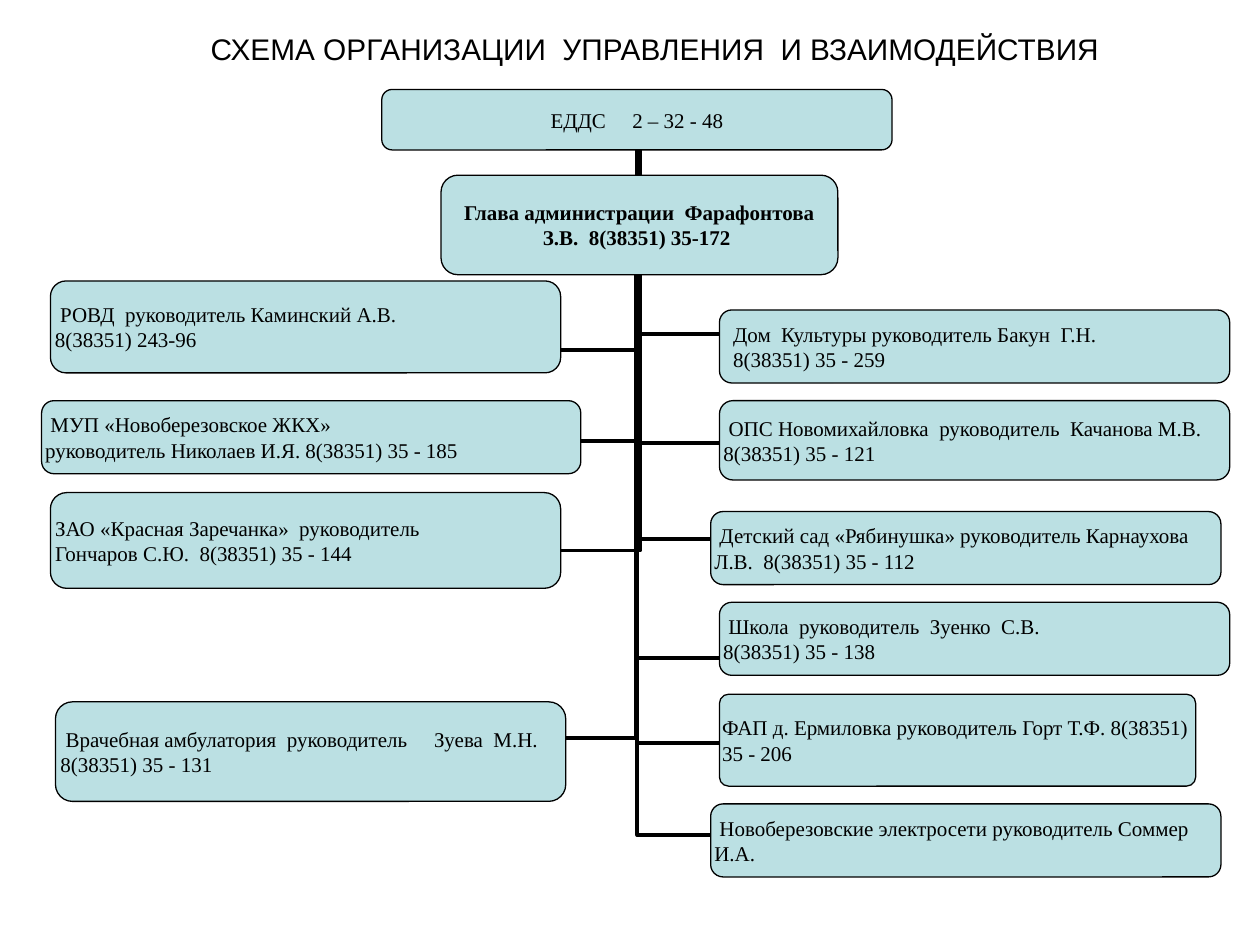
from pptx import Presentation
from pptx.dml.color import RGBColor
from pptx.enum.shapes import MSO_CONNECTOR, MSO_SHAPE
from pptx.enum.text import MSO_ANCHOR, PP_ALIGN
from pptx.oxml.ns import qn
from pptx.util import Inches, Pt
from lxml import etree

BLACK = RGBColor(0x00, 0x00, 0x00)
PALE_BLUE = RGBColor(0xBB, 0xE0, 0xE3)
CENTER, LEFT = PP_ALIGN.CENTER, PP_ALIGN.LEFT
MIDDLE = MSO_ANCHOR.MIDDLE
ELBOW = MSO_CONNECTOR.ELBOW
ROUNDED = MSO_SHAPE.ROUNDED_RECTANGLE

# Columns, in inches
LEFT_COL, RIGHT_COL, RIGHT_OUT = 0.4, 5.71, 5.64
BOX_W, ROW_H = 4.05, 0.58
LEFT_END, TRUNK = 4.41, 5.06
GAP_SPACING = "1200"  # extra width of a wide gap, in hundredths of a point


def add_text(para, text, size, font, bold=False):
    """Write lines split at newlines; a tab marks one widened space."""
    for line_no, line in enumerate(text.split("\n")):
        if line_no:
            para.add_line_break()
        for part_no, part in enumerate(line.split("\t")):
            for words in ([" ", part] if part_no else [part]):
                span = para.add_run()
                span.text = words
                span.font.size = Pt(size)
                span.font.name = font
                span.font.bold = bold
                span.font.color.rgb = BLACK
                if words == " ":
                    span.font._element.set("spc", GAP_SPACING)


deck = Presentation()
deck.slide_width, deck.slide_height = Inches(10), Inches(7.5)
page = deck.slides.add_slide(deck.slide_layouts[6])

# Wires: box end x, branch y, trunk x, top y
wires = [
    (7.02, 6.63, TRUNK, 2.6),
    (7.02, 5.9, TRUNK, 1.88),
    (LEFT_END, 5.86, 5.05, 1.44),
    (7.02, 5.22, TRUNK, 1.19),
    (LEFT_END, 3.5, 5.08, 0.86),
    (5.66, 4.28, TRUNK, 2.75),
    (LEFT_END, 2.78, 5.08, 0.86),
    (5.74, 3.52, TRUNK, 2.31),
    (5.74, 2.65, TRUNK, 2.17),
    (6.15, 1.73, TRUNK, 1.19),
    (LEFT_END, 4.37, 5.08, 1),
]
for end_x, branch_y, trunk_x, top_y in wires:
    wire = page.shapes.add_connector(
        ELBOW, Inches(end_x), Inches(branch_y), Inches(trunk_x), Inches(top_y))
    wire.line.color.rgb = BLACK
    wire.line.width = Pt(2.25)
    props = wire._element.spPr
    props.find(qn("a:prstGeom")).set("prst", "bentConnector2")  # one corner
    etree.SubElement(props, qn("a:effectLst"))

# Boxes: left, top, width, height, text
top_boxes = [
    (3.03, 0.71, BOX_W, 0.48, "ЕДДС\t2 – 32 - 48"),
    (3.5, 1.39, 3.15, 0.79,
     "Глава администрации  Фарафонтова З.В.  8(38351) 35-172 "),
]
side_boxes = [
    (LEFT_COL, 2.23, BOX_W, 0.73,
     " РОВД  руководитель Каминский А.В.\n8(38351) 243-96"),
    (0.33, 3.18, 4.28, ROW_H,
     " МУП «Новоберезовское ЖКХ»\nруководитель Николаев И.Я. 8(38351) 35 - 185"),
    (LEFT_COL, 3.91, BOX_W, 0.76,
     "ЗАО «Красная Заречанка»  руководитель\nГончаров С.Ю.  8(38351) 35 - 144"),
    (0.44, 5.57, BOX_W, 0.79,
     " Врачебная амбулатория  руководитель\tЗуева  М.Н.  8(38351) 35 - 131"),
    (RIGHT_COL, 2.46, BOX_W, ROW_H,
     "Дом  Культуры руководитель Бакун  Г.Н.\n8(38351) 35 - 259"),
    (RIGHT_COL, 3.18, BOX_W, 0.63,
     " ОПС Новомихайловка  руководитель  Качанова М.В. 8(38351) 35 - 121"),
    (RIGHT_OUT, 4.06, BOX_W, ROW_H,
     " Детский сад «Рябинушка» руководитель Карнаухова Л.В.  8(38351) 35 - 112"),
    (RIGHT_COL, 4.78, BOX_W, ROW_H,
     " Школа  руководитель  Зуенко  С.В.\n8(38351) 35 - 138"),
    (RIGHT_COL, 5.51, 3.78, 0.73,
     "ФАП д. Ермиловка руководитель Горт Т.Ф. 8(38351) 35 - 206"),
    (RIGHT_OUT, 6.38, BOX_W, ROW_H,
     " Новоберезовские электросети руководитель Соммер И.А."),
]
for left, top, width, height, text in top_boxes + side_boxes:
    box = page.shapes.add_shape(
        ROUNDED, Inches(left), Inches(top), Inches(width), Inches(height))
    box.shadow.inherit = False
    box.adjustments[0] = 0.1 if text.startswith("ФАП") else 0.17
    box.fill.solid()
    box.fill.fore_color.rgb = PALE_BLUE
    box.line.color.rgb = BLACK
    box.line.width = Pt(0.75)
    frame = box.text_frame
    frame.word_wrap = True
    frame.vertical_anchor = MIDDLE
    frame.margin_top = frame.margin_right = frame.margin_bottom = 0
    frame.margin_left = Inches(0.08 if text.startswith("Дом") else 0)
    para = frame.paragraphs[0]
    para.alignment = CENTER if top < 2 else LEFT
    add_text(para, text, 12, "Times New Roman", bold=text.startswith("Глава"))

# Title
title = page.shapes.add_textbox(
    Inches(1.57), Inches(0.21), Inches(7.26), Inches(0.36))
frame = title.text_frame
frame.word_wrap = False
frame.vertical_anchor = MIDDLE
frame.margin_left = frame.margin_right = Inches(0.07)
frame.margin_top = frame.margin_bottom = Inches(0.04)
para = frame.paragraphs[0]
para.alignment = CENTER
add_text(para, "СХЕМА ОРГАНИЗАЦИИ  УПРАВЛЕНИЯ  И ВЗАИМОДЕЙСТВИЯ", 17, "Arial")

deck.save("out.pptx")
